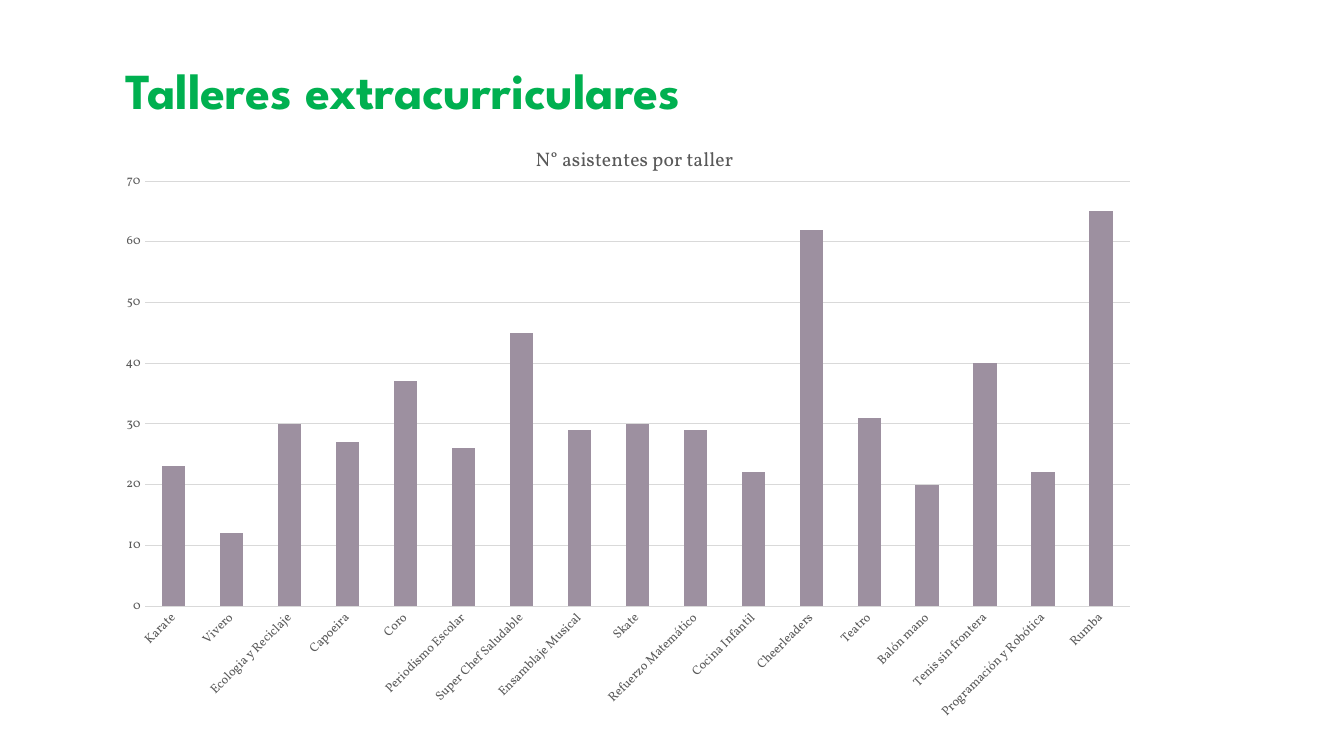
from dataclasses import dataclass
from typing import NamedTuple

import pptx
import pptx.chart.data
import pptx.dml.color
import pptx.enum.chart
import pptx.enum.text
import pptx.oxml
import pptx.oxml.ns
import pptx.util

EMU_PER_PX = 9525


@dataclass(frozen=True)
class Theme:
    title_font: str = "League Spartan"
    body_font: str = "Vollkorn"
    green: str = "00B050"
    text: str = "595959"
    grid: str = "D9D9D9"
    bar: str = "9D90A0"
    title_pt: int = 36
    chart_title_pt: int = 14
    axis_pt: int = 9


class Box(NamedTuple):
    left: int
    top: int
    width: int
    height: int

    def emu(self) -> list[int]:
        return [px * EMU_PER_PX for px in self]


class Workshop(NamedTuple):
    name: str
    attendees: int


THEME = Theme()
TITLE_BOX = Box(110, 6, 912, 112)
CHART_BOX = Box(110, 118, 989, 580)
PLOT_AREA = {"x": 0.028, "y": 0.094, "w": 0.949, "h": 0.698}
SERIES_NAME = "N° asistentes por taller"
WORKSHOPS = [
    Workshop("Karate", 23),
    Workshop("Vivero", 12),
    Workshop("Ecologia y Reciclaje", 30),
    Workshop("Capoeira", 27),
    Workshop("Coro", 37),
    Workshop("Periodismo Escolar", 26),
    Workshop("Super Chef Saludable", 45),
    Workshop("Ensamblaje Musical", 29),
    Workshop("Skate", 30),
    Workshop("Refuerzo Matemático", 29),
    Workshop("Cocina Infantil", 22),
    Workshop("Cheerleaders", 62),
    Workshop("Teatro", 31),
    Workshop("Balón mano", 20),
    Workshop("Tenis sin frontera", 40),
    Workshop("Programación y Robótica", 22),
    Workshop("Rumba", 65),
]


def rgb(value: str) -> pptx.dml.color.RGBColor:
    return pptx.dml.color.RGBColor.from_string(value)


def style_font(font, name: str, size: int, color: str, bold: bool = False) -> None:
    font.name = name
    font.size = pptx.util.Pt(size)
    font.bold = bold
    font.color.rgb = rgb(color)


def add_title(slide, text: str) -> None:
    sp = slide.shapes.title
    sp.left, sp.top, sp.width, sp.height = TITLE_BOX.emu()
    tf = sp.text_frame
    tf.text = text
    tf.word_wrap = True
    tf.auto_size = pptx.enum.text.MSO_AUTO_SIZE.NONE
    tf.vertical_anchor = pptx.enum.text.MSO_ANCHOR.BOTTOM
    p = tf.paragraphs[0]
    p.alignment = pptx.enum.text.PP_ALIGN.LEFT
    p.line_spacing = 0.8
    style_font(p.runs[0].font, THEME.title_font, THEME.title_pt, THEME.green, bold=True)


def style_axis(axis) -> None:
    axis.major_tick_mark = pptx.enum.chart.XL_TICK_MARK.NONE
    axis.minor_tick_mark = pptx.enum.chart.XL_TICK_MARK.NONE
    axis.format.line.fill.background()
    style_font(axis.tick_labels.font, THEME.body_font, THEME.axis_pt, THEME.text)


def fix_plot_area(chart) -> None:
    """Pin the inner plot area and slant the category labels by 45 degrees."""
    plot_area = chart._chartSpace.xpath("c:chart/c:plotArea")[0]
    for layout in plot_area.xpath("c:layout"):
        plot_area.remove(layout)
    modes = "".join(f'<c:{axis}Mode val="edge"/>' for axis in "xy")
    sizes = "".join(f'<c:{key} val="{val}"/>' for key, val in PLOT_AREA.items())
    plot_area.insert(0, pptx.oxml.parse_xml(
        f'<c:layout {pptx.oxml.ns.nsdecls("c")}><c:manualLayout>'
        f'<c:layoutTarget val="inner"/>{modes}{sizes}</c:manualLayout></c:layout>'))
    body = plot_area.xpath("c:catAx/c:txPr/a:bodyPr")[0]
    body.set("rot", "-2700000")
    body.set("vert", "horz")


def add_attendance_chart(slide) -> None:
    data = pptx.chart.data.CategoryChartData()
    data.categories = [w.name for w in WORKSHOPS]
    data.add_series(SERIES_NAME, [w.attendees for w in WORKSHOPS])
    kind = pptx.enum.chart.XL_CHART_TYPE.COLUMN_STACKED
    chart = slide.shapes.add_chart(kind, *CHART_BOX.emu(), data).chart
    chart.has_legend = False
    style_font(chart.font, THEME.body_font, THEME.axis_pt, THEME.text)

    tf = chart.chart_title.text_frame
    tf.text = SERIES_NAME
    style_font(tf.paragraphs[0].runs[0].font, THEME.body_font,
               THEME.chart_title_pt, THEME.text)
    chart.chart_title.include_in_layout = False

    plot = chart.plots[0]
    plot.gap_width = 150
    plot.overlap = 100
    plot.vary_by_categories = False
    fill = plot.series[0].format.fill
    fill.solid()
    fill.fore_color.rgb = rgb(THEME.bar)

    for axis in (chart.category_axis, chart.value_axis):
        style_axis(axis)
    axis = chart.value_axis
    axis.minimum_scale, axis.maximum_scale, axis.major_unit = 0, 70, 10
    axis.has_major_gridlines = True
    line = axis.major_gridlines.format.line
    line.color.rgb = rgb(THEME.grid)
    line.width = pptx.util.Pt(0.75)
    fix_plot_area(chart)


def main() -> None:
    prs = pptx.Presentation()
    prs.slide_width = 1280 * EMU_PER_PX
    prs.slide_height = 720 * EMU_PER_PX
    slide = prs.slides.add_slide(prs.slide_layouts.get_by_name("Title Only"))
    add_title(slide, "Talleres extracurriculares")
    add_attendance_chart(slide)
    prs.save("out.pptx")


if __name__ == "__main__":
    main()
